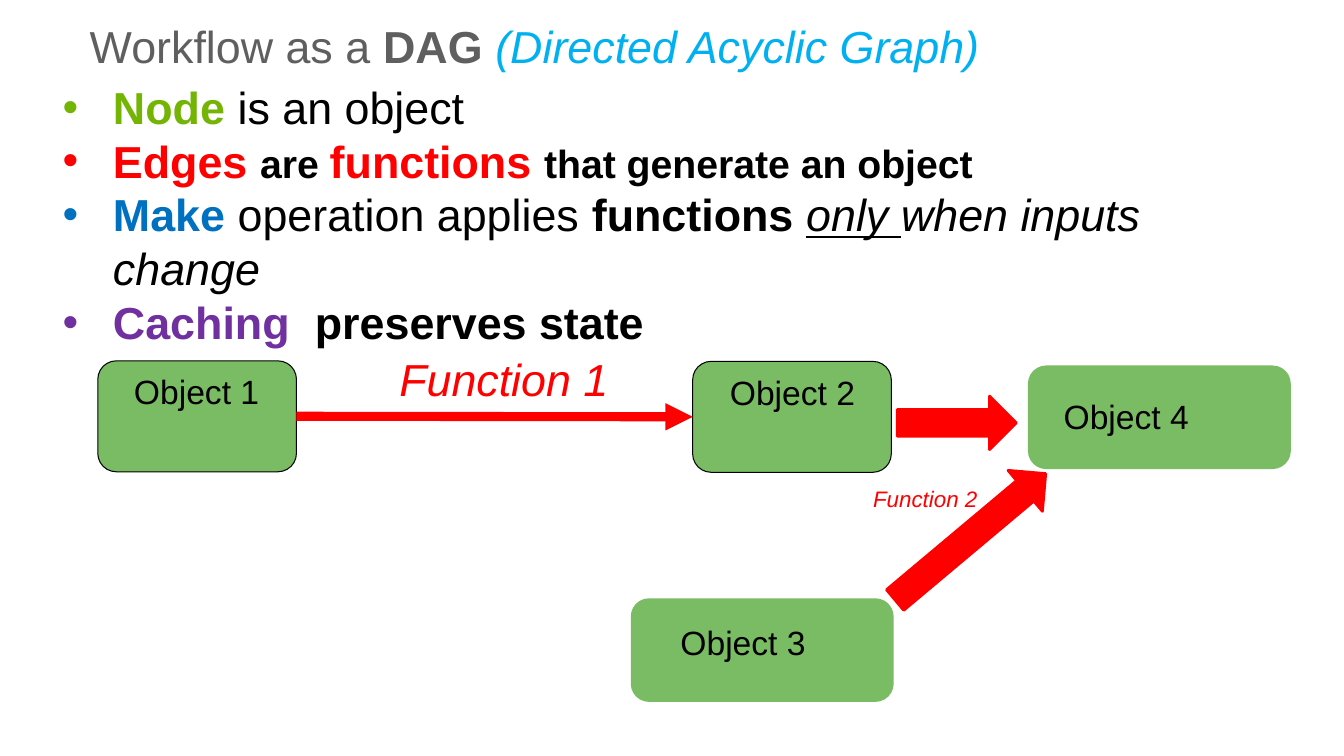
"""Build the slide that explains a workflow as a directed acyclic graph."""
from dataclasses import dataclass, field
from typing import Any

from lxml import etree
from pptx import Presentation
from pptx.dml.color import RGBColor
from pptx.enum.shapes import MSO_CONNECTOR, MSO_SHAPE
from pptx.enum.text import MSO_ANCHOR, MSO_AUTO_SIZE, PP_ALIGN
from pptx.oxml.ns import qn
from pptx.util import Emu, Inches, Pt

ROUNDED = MSO_SHAPE.ROUNDED_RECTANGLE
ARROW = MSO_SHAPE.RIGHT_ARROW
STRAIGHT = MSO_CONNECTOR.STRAIGHT
TOP, MIDDLE = MSO_ANCHOR.TOP, MSO_ANCHOR.MIDDLE
LEFT, CENTER = PP_ALIGN.LEFT, PP_ALIGN.CENTER
NO_FIT = MSO_AUTO_SIZE.NONE
RIGHT_SIDE, LEFT_SIDE = 3, 1

WIDTH, HEIGHT = Inches(13.33), Inches(7.5)
COLUMN, ROW = WIDTH / 100, HEIGHT / 100
INSET = Inches(0.05)
FONT = "Arial"
BLACK, RED, GREEN = "000000", "FF0000", "79BC64"
BOLD = {"bold": True}
ITALIC = {"italic": True}


@dataclass
class Area:
    """Place and extent in columns and rows of a 100 by 100 grid."""
    column: float
    row: float
    columns: float
    rows: float

    def box(self) -> tuple[Emu, Emu, Emu, Emu]:
        """Return left, top, width and height."""
        return (Emu(round(self.column * COLUMN)), Emu(round(self.row * ROW)),
                Emu(round(self.columns * COLUMN)), Emu(round(self.rows * ROW)))


@dataclass
class Piece:
    """A stretch of text in one format."""
    text: str
    color: str = BLACK
    size: int = 32
    style: dict[str, Any] = field(default_factory=dict)


@dataclass
class Node:
    """An object of the graph with its label."""
    name: str
    area: Area
    label: Area
    outline: str
    weight: float


@dataclass
class BlockArrow:
    """A thick arrow between two nodes."""
    area: Area
    rotation: float


@dataclass
class EdgeLabel:
    """The name of a function beside its edge."""
    piece: Piece
    area: Area


TITLE_AREA = Area(6.3, -2.13, 84.85, 16.4)
BODY_AREA = Area(4.28, 9.87, 91, 37.2)
TITLE = [Piece("Workflow as a ", "5F5F5F"), Piece("DAG ", "5F5F5F", style=BOLD),
         Piece("(Directed Acyclic Graph)", "00B0F0", style=ITALIC)]
BULLETS = [
    [Piece("Node", "73B404", style=BOLD), Piece(" is an object ")],
    [Piece("Edges ", RED, style=BOLD), Piece("are ", size=28, style=BOLD),
     Piece("functions ", RED, style=BOLD),
     Piece("that generate an object", size=28, style=BOLD)],
    [Piece("Make ", "0070C0", style=BOLD), Piece("operation applies "),
     Piece("functions ", style=BOLD),
     Piece("only ", style={"italic": True, "underline": True}),
     Piece("when inputs change", style=ITALIC)],
    [Piece("Caching  ", "7030A0", style=BOLD), Piece("preserves state", style=BOLD)],
]
NODES = [
    Node("Object 1", Area(7.28, 47.73, 14.78, 14.67),
         Area(7.65, 48.4, 13.95, 6.4), BLACK, 0.75),
    Node("Object 2", Area(51.54, 47.8, 14.78, 14.67),
         Area(51.99, 48.53, 13.95, 6.4), BLACK, 0.75),
    Node("Object 4", Area(76.59, 48.53, 19.35, 13.33),
         Area(76.82, 51.73, 13.95, 6.67), GREEN, 2),
    Node("Object 3", Area(47.04, 79.33, 19.35, 13.33),
         Area(48.31, 81.6, 13.95, 6.67), GREEN, 2),
]
BLOCK_ARROWS = [BlockArrow(Area(66.77, 52.4, 8.85, 7.07), 0),
                BlockArrow(Area(64.89, 67.47, 14.63, 7.07), 320)]
EDGE_LABELS = [
    EdgeLabel(Piece("Function 1", RED, 32, ITALIC), Area(29.33, 45.87, 16.43, 8.53)),
    EdgeLabel(Piece("Function 2", RED, 16, ITALIC), Area(64.59, 63.47, 8.63, 4.93)),
]


def color(value: str) -> RGBColor:
    """Turn a hex string into a colour."""
    return RGBColor.from_string(value)


def set_all(target: Any, values: dict[str, Any]) -> None:
    """Set every attribute named in values."""
    for name, value in values.items():
        setattr(target, name, value)


def place(shape: Any, area: Area) -> None:
    """Move a shape to its area."""
    set_all(shape, dict(zip(("left", "top", "width", "height"), area.box())))


def format_frame(frame: Any, anchor: Any = TOP, wrap: bool = True) -> None:
    """Set insets, anchor and wrapping of a text frame."""
    set_all(frame, {"margin_left": INSET, "margin_right": INSET, "margin_top": INSET,
                    "margin_bottom": INSET, "auto_size": NO_FIT, "word_wrap": wrap,
                    "vertical_anchor": anchor})


def write(paragraph: Any, pieces: list[Piece], alignment: Any = LEFT) -> None:
    """Fill a paragraph with formatted runs."""
    set_all(paragraph, {"alignment": alignment, "space_before": Pt(0)})
    for piece in pieces:
        run = paragraph.add_run()
        run.text = piece.text
        set_all(run.font, {"name": FONT, "size": Pt(piece.size), "bold": False,
                           "italic": False, **piece.style})
        run.font.color.rgb = color(piece.color)


def add_bullet(paragraph: Any) -> None:
    """Give a paragraph a hanging bullet."""
    properties = paragraph._p.get_or_add_pPr()
    properties.set("marL", str(Inches(0.5)))
    properties.set("indent", str(-Inches(0.5)))
    etree.SubElement(properties, qn("a:buFont")).set("typeface", FONT)
    etree.SubElement(properties, qn("a:buChar")).set("char", "•")


def add_label(slide: Any, piece: Piece, area: Area, alignment: Any, wrap: bool) -> None:
    """Add a one-line text box."""
    frame = slide.shapes.add_textbox(*area.box()).text_frame
    format_frame(frame, wrap=wrap)
    write(frame.paragraphs[0], [piece], alignment)


def add_block(slide: Any, kind: Any, area: Area, fill: str, outline: str,
              weight: float) -> Any:
    """Add a filled preset shape."""
    shape = slide.shapes.add_shape(kind, *area.box())
    shape.shadow.inherit = False
    shape.fill.solid()
    shape.fill.fore_color.rgb = color(fill)
    shape.line.color.rgb = color(outline)
    shape.line.width = Pt(weight)
    return shape


def add_node(slide: Any, node: Node) -> Any:
    """Add a node and its label."""
    shape = add_block(slide, ROUNDED, node.area, GREEN, node.outline, node.weight)
    add_label(slide, Piece(node.name, size=24), node.label, CENTER, True)
    return shape


def add_edge(slide: Any, source: Any, target: Any) -> None:
    """Join two nodes with a red arrow."""
    edge = slide.shapes.add_connector(STRAIGHT, 0, 0, 0, 0)
    edge.begin_connect(source, RIGHT_SIDE)
    edge.end_connect(target, LEFT_SIDE)
    edge.line.color.rgb = color(RED)
    edge.line.width = Pt(6.5)
    etree.SubElement(edge.line._get_or_add_ln(), qn("a:tailEnd")).set("type", "triangle")
    etree.SubElement(edge._element.spPr, qn("a:effectLst"))


def main() -> None:
    """Build and save the presentation."""
    presentation = Presentation()
    set_all(presentation, {"slide_width": WIDTH, "slide_height": HEIGHT})
    slide = presentation.slides.add_slide(presentation.slide_layouts[1])
    title, body = slide.placeholders
    place(title, TITLE_AREA)
    format_frame(title.text_frame, MIDDLE)
    write(title.text_frame.paragraphs[0], TITLE)
    place(body, BODY_AREA)
    format_frame(body.text_frame)
    for index, pieces in enumerate(BULLETS):
        frame = body.text_frame
        paragraph = frame.add_paragraph() if index else frame.paragraphs[0]
        write(paragraph, pieces)
        add_bullet(paragraph)
    first, second, *_ = [add_node(slide, node) for node in NODES]
    add_edge(slide, first, second)
    for arrow in BLOCK_ARROWS:
        add_block(slide, ARROW, arrow.area, RED, RED, 2).rotation = arrow.rotation
    for label in EDGE_LABELS:
        add_label(slide, label.piece, label.area, LEFT, False)
    presentation.save("out.pptx")


if __name__ == "__main__":
    main()
